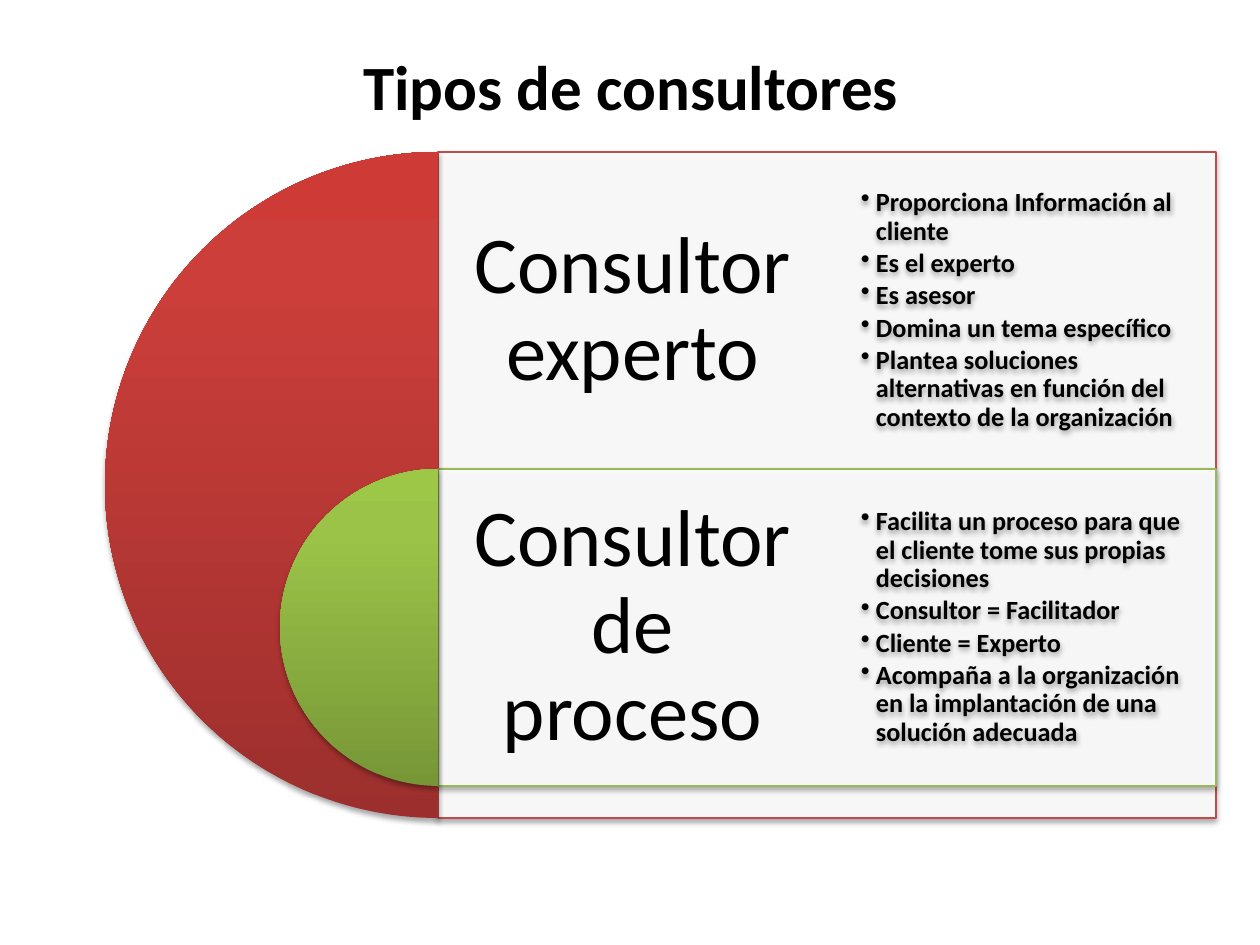
import copy
from dataclasses import dataclass

import pptx
import pptx.dml.color
import pptx.enum.shapes
import pptx.enum.text
import pptx.oxml
import pptx.util
from lxml import etree

NS = "http://schemas.openxmlformats.org/drawingml/2006/main"
PX = 914400 / 126
SHAPE = pptx.enum.shapes.MSO_SHAPE
ALIGN = pptx.enum.text.PP_ALIGN
MIDDLE = pptx.enum.text.MSO_ANCHOR.MIDDLE


@dataclass(frozen=True)
class Theme:
    font: str = "Calibri"
    text: str = "000000"
    panel: str = "FFFFFF"
    title_size: int = 36
    name_size: int = 46
    bullet_size: int = 15
    red: tuple = ("9C2F2D", "CB3E3A", "CE3B37")
    green: tuple = ("779737", "9BC348", "9DC746")
    red_line: str = "BF4C48"
    green_line: str = "98B955"


def px(n):
    return pptx.util.Emu(round(n * PX))


def rgb(value):
    return pptx.dml.color.RGBColor.from_string(value)


def write(p, text, *, size, font, color, bold=False, align=ALIGN.LEFT,
          line=None, after=None):
    """Put formatted text in a paragraph."""
    p.alignment = align
    p.line_spacing = line
    if after is not None:
        p.space_after = pptx.util.Pt(after)
    r = p.add_run()
    r.text = text
    r.font.name, r.font.size, r.font.bold = font, pptx.util.Pt(size), bold
    r.font.color.rgb = rgb(color)


class Deck:
    def __init__(self, theme, width, height):
        self.theme = theme
        self.prs = pptx.Presentation()
        self.prs.slide_width, self.prs.slide_height = px(width), px(height)
        self.s = self.prs.slides.add_slide(self.prs.slide_layouts[5])

    def shadow(self, sp):
        sp.shadow.inherit = False
        effects = sp._element.spPr.find(f"{{{NS}}}effectLst")
        effects.append(pptx.oxml.parse_xml(
            f'<a:outerShdw xmlns:a="{NS}" blurRad="40000" dist="23000" '
            'dir="5400000" rotWithShape="0"><a:srgbClr val="000000">'
            '<a:alpha val="35000"/></a:srgbClr></a:outerShdw>'))

    def frame(self, sp, left, top, right, bottom):
        tf = sp.text_frame
        tf.word_wrap = True
        tf.vertical_anchor = MIDDLE
        tf.margin_left, tf.margin_top = px(left), px(top)
        tf.margin_right, tf.margin_bottom = px(right), px(bottom)
        return tf

    def title(self, text, x, y, w, h):
        sp = self.s.shapes.title
        sp.left, sp.top, sp.width, sp.height = map(px, (x, y, w, h))
        tf = self.frame(sp, 13, 6, 13, 6)
        write(tf.paragraphs[0], text, size=self.theme.title_size,
              font=self.theme.font, color=self.theme.text, bold=True,
              align=ALIGN.CENTER)

    def panel(self, text, x, y, w, h, line, insets):
        sp = self.s.shapes.add_shape(SHAPE.RECTANGLE, *map(px, (x, y, w, h)))
        sp.fill.solid()
        sp.fill.fore_color.rgb = rgb(self.theme.panel)
        color = sp._element.spPr.find(f"{{{NS}}}solidFill/{{{NS}}}srgbClr")
        etree.SubElement(color, f"{{{NS}}}alpha", val="90000")
        sp.line.color.rgb = rgb(line)
        sp.line.width = pptx.util.Pt(0.75)
        self.shadow(sp)
        tf = self.frame(sp, *insets)
        write(tf.paragraphs[0], text, size=self.theme.name_size,
              font=self.theme.font, color=self.theme.text,
              align=ALIGN.CENTER, line=0.9, after=16)

    def half_disc(self, x, y, size, colors):
        sp = self.s.shapes.add_shape(SHAPE.PIE, *map(px, (x, y, size, size)))
        sp.adjustments[0], sp.adjustments[1] = 54, 162
        sp.fill.gradient()
        sp.fill.gradient_angle = 90
        stops = sp._element.spPr.find(f"{{{NS}}}gradFill/{{{NS}}}gsLst")
        stops.append(copy.deepcopy(stops[-1]))
        for stop, position, color in zip(sp.fill.gradient_stops,
                                         (0, 0.8, 1), colors):
            stop.position = position
            stop.color.rgb = rgb(color)
        sp.line.fill.background()
        self.shadow(sp)

    def bullets(self, items, x, y, w, h):
        sp = self.s.shapes.add_textbox(*map(px, (x, y, w, h)))
        self.shadow(sp)
        tf = self.frame(sp, 34, 34, 34, 34)
        for i, item in enumerate(items):
            p = tf.add_paragraph() if i else tf.paragraphs[0]
            p.level = 1
            pPr = p._p.get_or_add_pPr()
            pPr.set("marL", str(px(15)))
            pPr.set("indent", str(px(-15)))
            etree.SubElement(pPr, f"{{{NS}}}buChar", char="•")
            write(p, item, size=self.theme.bullet_size, font=self.theme.font,
                  color=self.theme.text, bold=True, line=0.9, after=2.25)


def main():
    theme = Theme()
    deck = Deck(theme, 1260, 945)
    deck.title("Tipos de consultores", 1, -4, 1260, 179)

    # Layout: discs are centred on the left edge of the panels
    axis, top, width, row, full = 438, 152, 778, 317, 666
    list_width, pad = width // 2, 24
    consultants = [
        ("Consultor experto", full, theme.red, theme.red_line, [
            "Proporciona Información al cliente",
            "Es el experto",
            "Es asesor",
            "Domina un tema específico",
            "Plantea soluciones alternativas en función del contexto "
            "de la organización"]),
        ("Consultor de proceso", row, theme.green, theme.green_line, [
            "Facilita un proceso para que el cliente tome sus propias "
            "decisiones",
            "Consultor = Facilitador",
            "Cliente = Experto",
            "Acompaña a la organización en la implantación de una "
            "solución adecuada"]),
    ]
    rows = [(top + i * row, *c) for i, c in enumerate(consultants)]

    # Panels with the consultant names
    for y, name, size, _, line, _ in rows:
        insets = (pad, pad, list_width + pad, size - row + pad)
        deck.panel(name, axis, y, width, size, line, insets)

    # Nested half discs
    for y, _, size, colors, _, _ in rows:
        deck.half_disc(axis - size // 2, y, size, colors)

    # Traits of each consultant
    for y, *_, items in rows:
        deck.bullets(items, axis + width - list_width, y, list_width, row)

    deck.prs.save("out.pptx")


if __name__ == "__main__":
    main()
